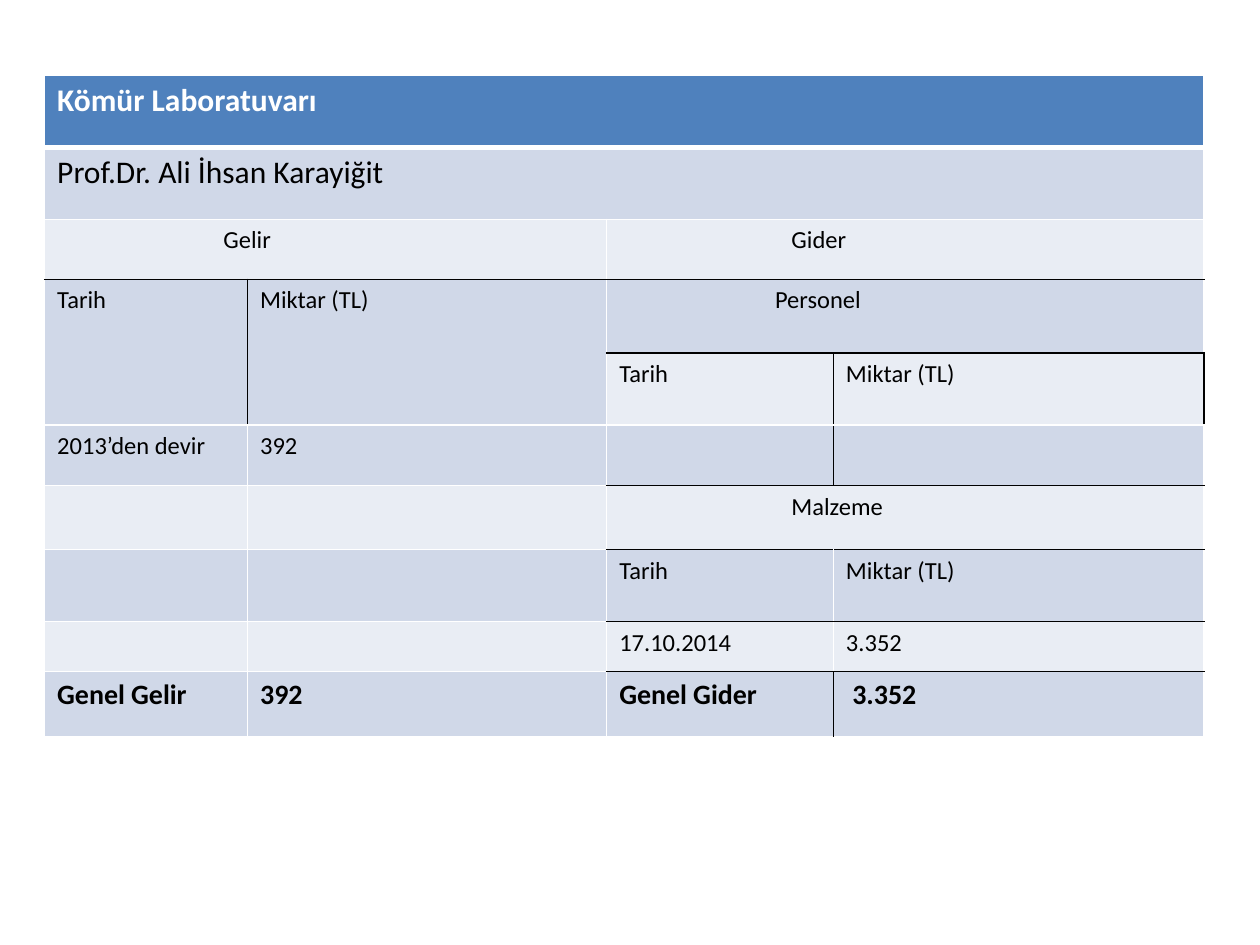
from lxml.etree import SubElement
from pptx import Presentation
from pptx.dml.color import RGBColor
from pptx.oxml.ns import qn
from pptx.util import Cm, Pt

BLUE = RGBColor(0x4F, 0x81, 0xBD)
DARK_BAND = RGBColor(0xD0, 0xD8, 0xE8)
LIGHT_BAND = RGBColor(0xE9, 0xED, 0xF4)
WHITE = RGBColor(0xFF, 0xFF, 0xFF)
BLACK = RGBColor(0, 0, 0)

COL_WIDTHS = [4.09, 7.24, 4.57, 7.47]
ROW_HEIGHTS = [1.45, 1.45, 1.21, 1.49, 1.45, 1.22, 1.29, 1.45, 1.01, 1.31]
ROWS = [
    ["Kömür Laboratuvarı", "", "", ""],
    ["Prof.Dr. Ali İhsan Karayiğit", "", "", ""],
    ["Gelir", "", "Gider", ""],
    ["Tarih", "Miktar (TL)", "Personel", ""],
    ["", "", "Tarih", "Miktar (TL)"],
    ["2013’den devir", "392", "", ""],
    ["", "", "Malzeme", ""],
    ["", "", "Tarih", "Miktar (TL)"],
    ["", "", "17.10.2014", "3.352"],
    ["Genel Gelir", "392", "Genel Gider", " 3.352"],
]
SIZES = {0: 18, 1: 18, 9: 16}
INDENTS = {"Gelir": 3.35, "Gider": 3.47, "Personel": 3.14, "Malzeme": 3.47}
MERGES = [((0, 0), (0, 3)), ((1, 0), (1, 3)), ((2, 0), (2, 1)), ((2, 2), (2, 3)),
          ((3, 0), (4, 0)), ((3, 1), (4, 1)), ((3, 2), (3, 3)), ((6, 2), (6, 3))]

# Black rules: grid line -> the columns (or rows) it runs along
BLACK_ROW_LINES = {3: (0, 1, 2, 3), **{line: (2, 3) for line in (4, 6, 7, 8, 9)}}
BLACK_COL_LINES = {1: (3, 4), 3: (4, 5, 9), 4: (3, 4)}


def add_border(cell, side, color, width=1):
    ln = SubElement(cell._tc.get_or_add_tcPr(), qn(f"a:ln{side}"), w=str(Pt(width)))
    fill = SubElement(ln, qn("a:solidFill"))
    SubElement(fill, qn("a:srgbClr"), val=str(color))


prs = Presentation()
prs.slide_width, prs.slide_height = Cm(25.4), Cm(19.05)
s = prs.slides.add_slide(prs.slide_layouts[6])

table = s.shapes.add_table(len(ROWS), len(COL_WIDTHS), Cm(0.9), Cm(1.52),
                           Cm(sum(COL_WIDTHS)), Cm(sum(ROW_HEIGHTS))).table
table.first_row = table.horz_banding = False
for col, width in zip(table.columns, COL_WIDTHS):
    col.width = Cm(width)
for row, height in zip(table.rows, ROW_HEIGHTS):
    row.height = Cm(height)

for i, texts in enumerate(ROWS):
    for j, text in enumerate(texts):
        cell = table.cell(i, j)
        for side, line in (("L", j), ("R", j + 1)):
            black = i in BLACK_COL_LINES.get(line, ())
            add_border(cell, side, BLACK if black else WHITE)
        for side, line in (("T", i), ("B", i + 1)):
            black = j in BLACK_ROW_LINES.get(line, ())
            add_border(cell, side, BLACK if black else WHITE, 3 if line == 1 else 1)
        cell.fill.solid()
        cell.fill.fore_color.rgb = BLUE if i == 0 else DARK_BAND if i % 2 else LIGHT_BAND

        p = cell.text_frame.paragraphs[0]
        p.font.size = Pt(SIZES.get(i, 14))
        if not text:
            continue
        if text in INDENTS:
            p._p.get_or_add_pPr().set("marL", str(Cm(INDENTS[text])))
        r = p.add_run()
        r.text = text
        r.font.name = "Calibri"
        r.font.size = Pt(SIZES.get(i, 14))
        r.font.bold = i in (0, 9)
        r.font.color.rgb = WHITE if i == 0 else BLACK

for first, last in MERGES:
    table.cell(*first).merge(table.cell(*last))

prs.save("out.pptx")
